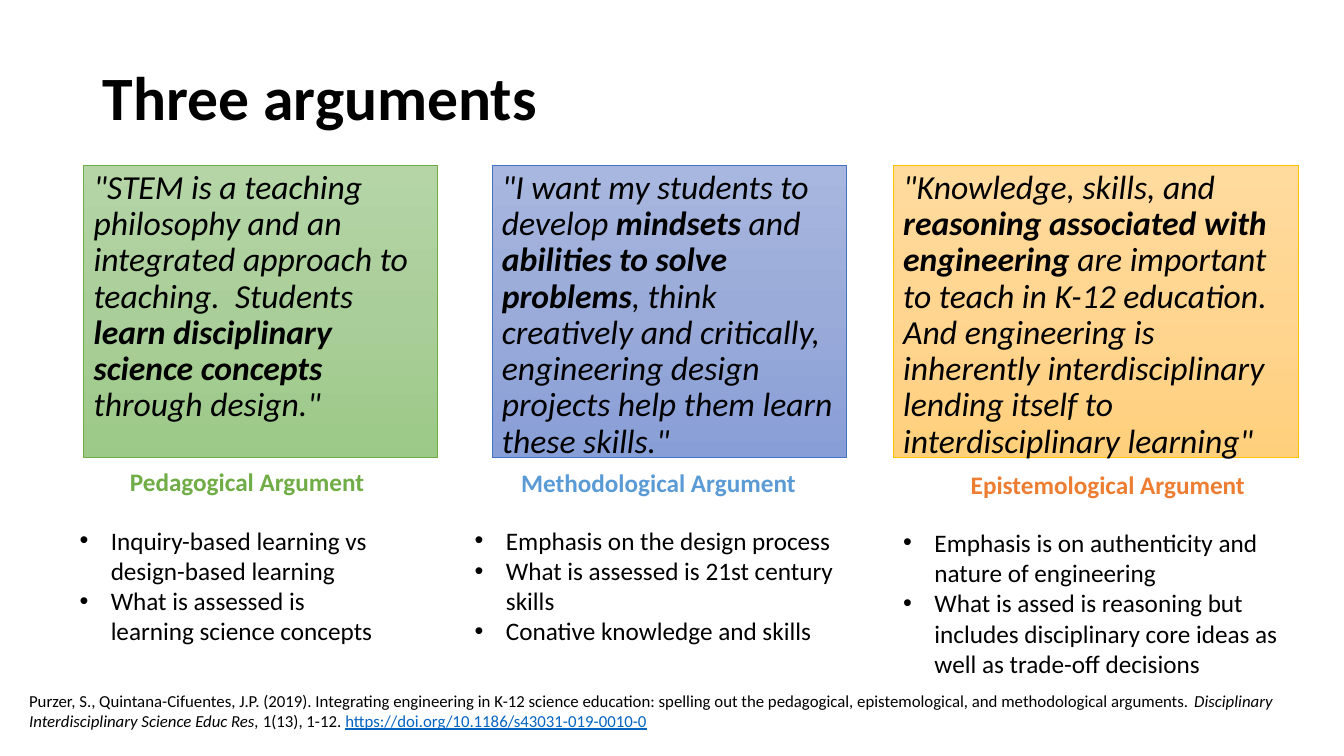
"""Build the slide that compares three arguments for engineering in science education."""
import copy

import pptx
import pptx.dml.color
import pptx.enum.shapes
import pptx.enum.text
import pptx.oxml.ns
import pptx.util
from lxml import etree

PX = 9144
FONT = "Calibri"
BLACK = "000000"
LINK = "0563C1"
HANG = 31
QUOTE_TOP, QUOTE_HEIGHT = 164, 290
NAME_WIDTH, NAME_HEIGHT = 300, 40

TITLE = "Three arguments"
TITLE_BOX = (92, 40, 1150, 120)
ARGUMENTS = [
    {
        "quote": [('"STEM is a teaching philosophy and an integrated approach to teaching.  Students ', "i"),
                  ("learn disciplinary science concepts", "bi"),
                  (' through design."', "i")],
        "quote_span": (83, 351),
        "gradient": ("B5D5A7", "AACE9A", "9CC987"),
        "border": "70AD47",
        "name": "Pedagogical Argument",
        "name_at": (119, 458),
        "name_color": "70AD47",
        "points": ["Inquiry-based learning vs design-based learning",
                   "What is assessed is learning science concepts"],
        "points_box": (19, 516, 365, 131),
        "level": 1,
        "indent": 81,
    },
    {
        "quote": [('"I want my students to develop ', "i"),
                  ("mindsets", "bi"),
                  (" and ", "i"),
                  ("abilities to solve problems", "bi"),
                  (", think creatively and critically, engineering design projects"
                   ' help them learn these skills."', "i")],
        "quote_span": (488, 351),
        "gradient": ("A8B7DF", "9AABD9", "889ED7"),
        "border": "4472C4",
        "name": "Methodological Argument",
        "name_at": (507, 459),
        "name_color": "5B9BD5",
        "points": ["Emphasis on the design process",
                   "What is assessed is 21st century skills",
                   "Conative knowledge and skills"],
        "points_box": (461, 516, 386, 131),
        "level": 0,
        "indent": HANG,
    },
    {
        "quote": [('"Knowledge, skills, and ', "i"),
                  ("reasoning associated with engineering", "bi"),
                  (" are important to teach in K-12 education. And engineering is inherently"
                   ' interdisciplinary lending itself to interdisciplinary learning"', "i")],
        "quote_span": (886, 402),
        "gradient": ("FFDB9E", "FFD590", "FFD07C"),
        "border": "FFC000",
        "name": "Epistemological Argument",
        "name_at": (953, 461),
        "name_color": "ED7D31",
        "points": ["Emphasis is on authenticity and nature of engineering",
                   "What is assed is reasoning but includes disciplinary core ideas"
                   " as well as trade-off decisions"],
        "points_box": (886, 518, 402, 162),
        "level": 0,
        "indent": HANG,
    },
]
CITATION = [
    ("Purzer, S., Quintana-Cifuentes, J.P. (2019). Integrating engineering in K-12 science education: "
     "spelling out the pedagogical, epistemological, and methodological arguments. ", "", BLACK),
    ("Disciplinary Interdisciplinary Science Educ Res,", "i", BLACK),
    (" 1(13), 1-12. ", "", BLACK),
    ("https://doi.org/10.1186/s43031-019-0010-0", "u", LINK),
]
CITATION_BOX = (19, 680, 1304, 50)


def rgb(color):
    """Turn a hex string into a colour."""
    return pptx.dml.color.RGBColor.from_string(color)


def emu(box):
    """Turn px lengths into EMU."""
    return [length * PX for length in box]


def add_run(paragraph, text, size, color=BLACK, style=""):
    """Add one run; style holds any of b, i and u."""
    run = paragraph.add_run()
    run.text = text
    run.font.name = FONT
    run.font.size = pptx.util.Pt(size)
    run.font.color.rgb = rgb(color)
    run.font.bold = "b" in style
    run.font.italic = "i" in style
    run.font.underline = "u" in style


def add_text_frame(slide, box):
    """Add a wrapping text box and return its frame."""
    frame = slide.shapes.add_textbox(*emu(box)).text_frame
    frame.word_wrap = True
    return frame


def fill_gradient(shape, colors):
    """Fill a shape from top to bottom with evenly spaced colours."""
    shape.fill.gradient()
    shape.fill.gradient_angle = 270
    stop_list = shape.fill._xPr.find(".//" + pptx.oxml.ns.qn("a:gsLst"))
    stop_list.insert(1, copy.deepcopy(stop_list[0]))
    for index, (stop, color) in enumerate(zip(shape.fill.gradient_stops, colors)):
        stop.position = index / (len(colors) - 1)
        stop.color.rgb = rgb(color)


def add_bullet(paragraph, indent):
    """Give a paragraph a hanging round bullet."""
    properties = paragraph._p.get_or_add_pPr()
    properties.set("marL", str(indent * PX))
    properties.set("indent", str(-HANG * PX))
    etree.SubElement(properties, pptx.oxml.ns.qn("a:buFont")).set("typeface", "Arial")
    etree.SubElement(properties, pptx.oxml.ns.qn("a:buChar")).set("char", "•")


def add_quote(slide, argument):
    """Add the shaded box with the quote."""
    left, width = argument["quote_span"]
    quote = slide.shapes.add_shape(pptx.enum.shapes.MSO_SHAPE.RECTANGLE,
                                   *emu((left, QUOTE_TOP, width, QUOTE_HEIGHT)))
    quote.shadow.inherit = False
    fill_gradient(quote, argument["gradient"])
    quote.line.color.rgb = rgb(argument["border"])
    quote.line.width = pptx.util.Pt(0.5)
    quote.text_frame.word_wrap = True
    quote.text_frame.vertical_anchor = pptx.enum.text.MSO_ANCHOR.TOP
    paragraph = quote.text_frame.paragraphs[0]
    paragraph.alignment = pptx.enum.text.PP_ALIGN.LEFT
    paragraph.line_spacing = 0.9
    paragraph.space_before = pptx.util.Pt(10)
    for text, style in argument["quote"]:
        add_run(paragraph, text, 24, style=style)


def add_argument(slide, argument):
    """Add the quote, name and points of one argument."""
    add_quote(slide, argument)
    name = add_text_frame(slide, (*argument["name_at"], NAME_WIDTH, NAME_HEIGHT))
    add_run(name.paragraphs[0], argument["name"], 18, argument["name_color"], "b")
    points = add_text_frame(slide, argument["points_box"])
    for index, point in enumerate(argument["points"]):
        paragraph = points.add_paragraph() if index else points.paragraphs[0]
        paragraph.level = argument["level"]
        add_bullet(paragraph, argument["indent"])
        add_run(paragraph, point, 18)


def main():
    """Build and save the slide."""
    deck = pptx.Presentation()
    deck.slide_width, deck.slide_height = emu((1333, 750))
    slide = deck.slides.add_slide(deck.slide_layouts[5])
    title = slide.shapes.title
    title.left, title.top, title.width, title.height = emu(TITLE_BOX)
    title.text_frame.vertical_anchor = pptx.enum.text.MSO_ANCHOR.MIDDLE
    heading = title.text_frame.paragraphs[0]
    heading.alignment = pptx.enum.text.PP_ALIGN.LEFT
    heading.line_spacing = 0.9
    add_run(heading, TITLE, 44, style="b")
    for argument in ARGUMENTS:
        add_argument(slide, argument)
    citation = add_text_frame(slide, CITATION_BOX).paragraphs[0]
    for text, style, color in CITATION:
        add_run(citation, text, 12, color, style)
    deck.save("out.pptx")


if __name__ == "__main__":
    main()
